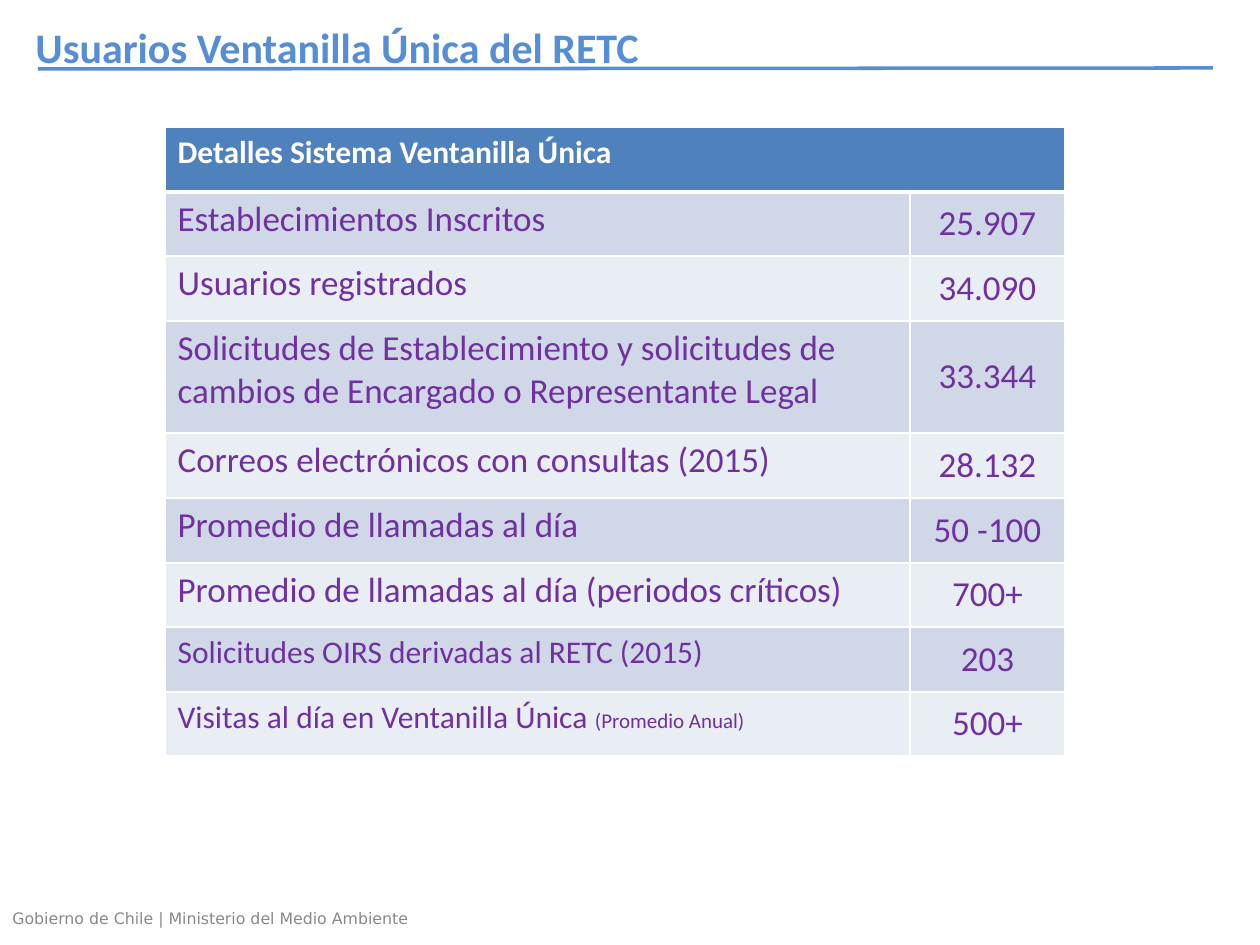
"""Build the slide with the usage figures of the Ventanilla Única system."""
from dataclasses import dataclass

import lxml.etree
import pptx
import pptx.dml.color
import pptx.enum.shapes
import pptx.enum.text
import pptx.oxml.ns
import pptx.util

PX = 914400 / 126
COLORS = {
    "accent": "558ED5", "header": "4F81BD", "dark_band": "D0D8E8",
    "light_band": "E9EDF4", "purple": "7030A0", "white": "FFFFFF", "gray": "898989",
}
ANCHOR = pptx.enum.text.MSO_ANCHOR
ALIGN = pptx.enum.text.PP_ALIGN
qn = pptx.oxml.ns.qn


@dataclass
class Span:
    text: str
    size: int = 20
    color: str = "purple"
    bold: bool = False
    name: str = "Calibri"


@dataclass
class Row:
    height: int
    label: list[Span]
    value: str


ROWS = [
    Row(64, [Span("Establecimientos Inscritos")], "25.907"),
    Row(65, [Span("Usuarios registrados")], "34.090"),
    Row(112, [Span("Solicitudes de Establecimiento y solicitudes de cambios "
                   "de Encargado o Representante Legal")], "33.344"),
    Row(65, [Span("Correos electrónicos con consultas (2015)")], "28.132"),
    Row(65, [Span("Promedio de llamadas al día")], "50 -100"),
    Row(64, [Span("Promedio de llamadas al día (periodos críticos)")], "700+"),
    Row(65, [Span("Solicitudes OIRS derivadas al RETC (2015)", 18)], "203"),
    Row(64, [Span("Visitas al día en Ventanilla Única ", 18),
             Span("(Promedio Anual)", 12)], "500+"),
]


def px(length: int) -> int:
    """Turn pixels into EMU."""
    return round(length * PX)


def rgb(color: str) -> pptx.dml.color.RGBColor:
    """Look up a named colour."""
    return pptx.dml.color.RGBColor.from_string(COLORS[color])


def write(frame, spans: list[Span], align=ALIGN.LEFT) -> None:
    """Fill the first paragraph with formatted spans."""
    para = frame.paragraphs[0]
    para.alignment = align
    for span in spans:
        run = para.add_run()
        run.text = span.text
        formats = {"size": pptx.util.Pt(span.size), "bold": span.bold, "name": span.name}
        for key, setting in formats.items():
            setattr(run.font, key, setting)
        run.font.color.rgb = rgb(span.color)


def add_text(page, left: int, top: int, width: int, height: int,
             span: Span, **formats) -> None:
    """Add a text box with one span."""
    box = page.shapes.add_textbox(px(left), px(top), px(width), px(height))
    for key, setting in formats.items():
        setattr(box.text_frame, key, setting)
    write(box.text_frame, [span])


def style_cell(cell, fill: str, top: int = 1, bottom: int = 1) -> None:
    """Set the white borders and the fill of a cell."""
    properties = cell._tc.get_or_add_tcPr()
    for side, width in {"L": 1, "R": 1, "T": top, "B": bottom}.items():
        line = lxml.etree.SubElement(properties, qn(f"a:ln{side}"),
                                     w=str(pptx.util.Pt(width)))
        paint = lxml.etree.SubElement(line, qn("a:solidFill"))
        lxml.etree.SubElement(paint, qn("a:srgbClr"), val=COLORS["white"])
    cell.fill.solid()
    cell.fill.fore_color.rgb = rgb(fill)


def add_details(page) -> None:
    """Add the table with its merged header."""
    heights = [65] + [row.height for row in ROWS]
    widths = [745, 155]
    table = page.shapes.add_table(len(heights), len(widths), px(165), px(127),
                                  px(sum(widths)), px(sum(heights))).table
    table.horz_banding = False
    for column, width in zip(table.columns, widths):
        column.width = px(width)
    for line, height in zip(table.rows, heights):
        line.height = px(height)
    header = table.cell(0, 0)
    header.merge(table.cell(0, 1))
    for cell in table.rows[0].cells:
        style_cell(cell, "header", bottom=3)
    write(header.text_frame, [Span("Detalles Sistema Ventanilla Única", 18, "white", True)])
    for index, row in enumerate(ROWS, 1):
        label, figure = table.cell(index, 0), table.cell(index, 1)
        for cell in (label, figure):
            style_cell(cell, "dark_band" if index % 2 else "light_band",
                       top=3 if index == 1 else 1)
        write(label.text_frame, row.label)
        write(figure.text_frame, [Span(row.value)], ALIGN.CENTER)
        figure.vertical_anchor = ANCHOR.MIDDLE


def add_rule(page) -> None:
    """Add the line under the title."""
    rule = page.shapes.add_connector(pptx.enum.shapes.MSO_CONNECTOR.STRAIGHT,
                                     px(38), px(69), px(1213), px(68))
    rule.line.color.rgb = rgb("accent")
    rule.line.width = pptx.util.Pt(2)
    lxml.etree.SubElement(rule._element.spPr, qn("a:effectLst"))


def main() -> None:
    """Build and save the deck."""
    deck = pptx.Presentation()
    deck.slide_width, deck.slide_height = px(1260), px(945)
    page = deck.slides.add_slide(deck.slide_layouts[6])
    add_text(page, 0, 901, 438, 34,
             Span("Gobierno de Chile | Ministerio del Medio Ambiente", 9, "gray",
                  name="DejaVu Sans"),
             word_wrap=True, vertical_anchor=ANCHOR.MIDDLE)
    add_text(page, 23, 15, 635, 63,
             Span("Usuarios Ventanilla Única del RETC", 24, "accent", True),
             word_wrap=False, auto_size=pptx.enum.text.MSO_AUTO_SIZE.SHAPE_TO_FIT_TEXT)
    add_details(page)
    add_rule(page)
    deck.save("out.pptx")


if __name__ == "__main__":
    main()
